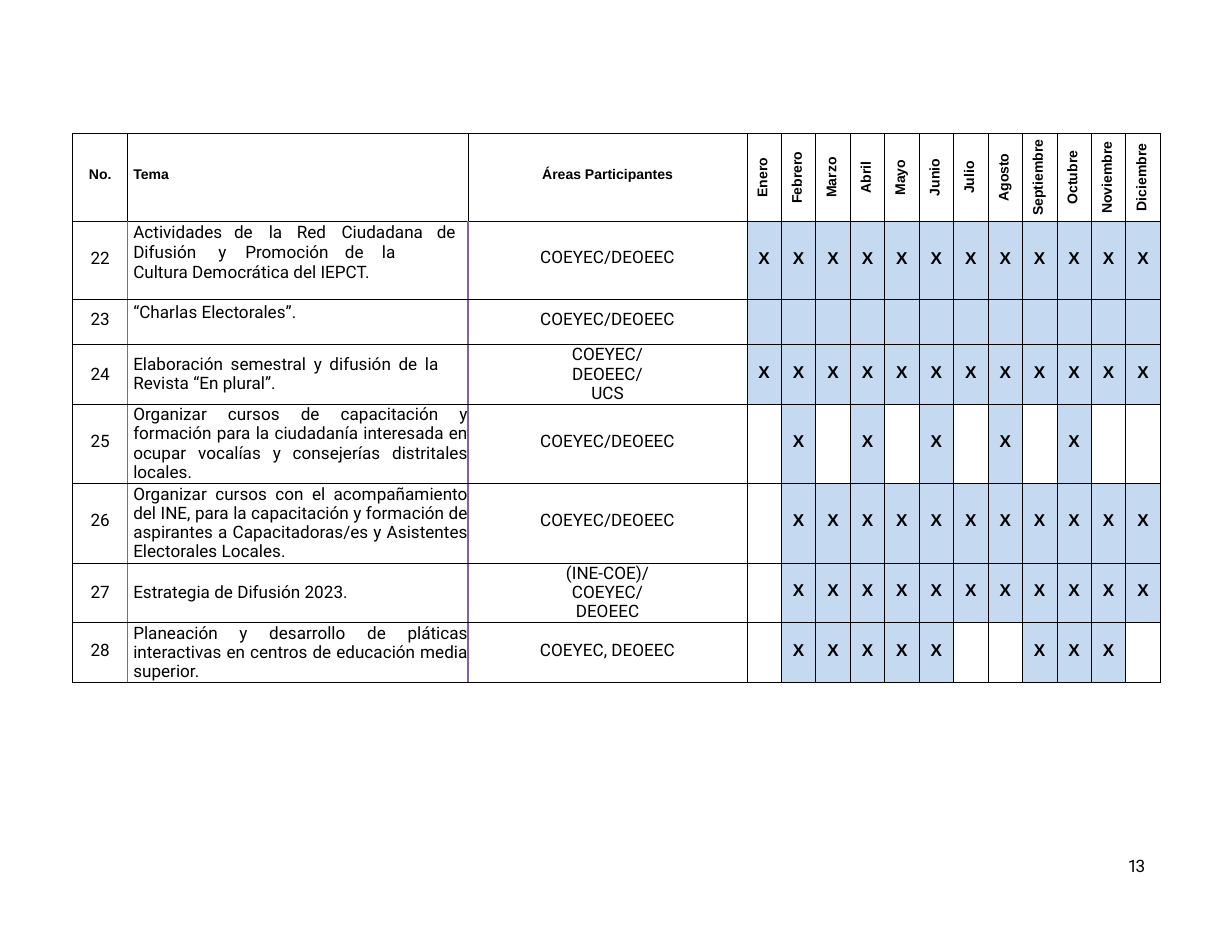
from lxml import etree
from pptx import Presentation, util as u
from pptx.dml.color import RGBColor
from pptx.enum import text
from pptx.oxml import ns

COLORS = {"ink": "000000", "rule": "8063A1", "active": "C5D9F0"}
GRID = (1100, 850)  # columns and rows of the slide grid
CENTER, LEFT, JUSTIFY = text.PP_ALIGN.CENTER, text.PP_ALIGN.LEFT, text.PP_ALIGN.JUSTIFY
TOP, MIDDLE = text.MSO_ANCHOR.TOP, text.MSO_ANCHOR.MIDDLE

MONTHS = ["Enero", "Febrero", "Marzo", "Abril", "Mayo", "Junio", "Julio", "Agosto",
          "Septiembre", "Octubre", "Noviembre", "Diciembre"]
COLUMNS = [49, 304, 249] + [30.75] * len(MONTHS)
HEADER_HEIGHT = 79

# Height, topic, areas, months (X marked, o shaded only, - empty), topic cell options
FIRST_TOPIC = ("Actividades\tde\tla\tRed\tCiudadana\tde\n"
               "Difusión\ty\tPromoción\tde\tla\vCultura Democrática del IEPCT.")
BOTH = "COEYEC/DEOEEC"
ACTIVITIES = [
    (69, FIRST_TOPIC, BOTH, "XXXXXXXXXXXX",
     {"align": LEFT, "anchor": TOP, "spacing": 1.02,
      "tabs": [[0.9, 1.21, 1.46, 1.86, 2.71], [0.76, 1, 1.89, 2.22]]}),
    (40.5, "“Charlas Electorales”.", BOTH, "oooooooooooo",
     {"anchor": TOP, "margin_top": 4}),
    (53.5, "Elaboración semestral y difusión de la Revista “En plural”.",
     "COEYEC/\vDEOEEC/\vUCS", "XXXXXXXXXXXX", {"margin_right": 26}),
    (70.5, "Organizar cursos de capacitación y formación para la ciudadanía "
     "interesada en ocupar vocalías y consejerías distritales locales.",
     BOTH, "-X-X-X-X-X--", {}),
    (71.5, "Organizar cursos con el acompañamiento del INE, para la capacitación y "
     "formación de aspirantes a Capacitadoras/es y Asistentes Electorales Locales.",
     BOTH, "-XXXXXXXXXXX", {}),
    (53, "Estrategia de Difusión 2023.", "(INE-COE)/\vCOEYEC/\vDEOEEC",
     "-XXXXXXXXXXX", {}),
    (53.5, "Planeación y desarrollo de pláticas interactivas en centros de educación "
     "media superior.", "COEYEC, DEOEEC", "-XXXXX--XXX-", {}),
]
FIRST_NUMBER = 22


class Page:
    """Holds the text styles and the current slide."""

    STYLES = {
        "header": {"name": "Arial", "size": u.Pt(9), "bold": True},
        "body": {"name": "Roboto", "size": u.Pt(11), "bold": False},
        "mark": {"name": "Arial", "size": u.Pt(11), "bold": True},
    }

    def __init__(self, presentation):
        self.slide = presentation.slides.add_slide(presentation.slide_layouts[6])
        self.unit_x = presentation.slide_width / GRID[0]
        self.unit_y = presentation.slide_height / GRID[1]

    def x(self, columns):
        return u.Emu(round(columns * self.unit_x))

    def y(self, rows):
        return u.Emu(round(rows * self.unit_y))

    def fill_text(self, frame, content, style, align=CENTER, spacing=None, tabs=()):
        frame.text = content
        for index, paragraph in enumerate(frame.paragraphs):
            if tabs:
                self.tab_stops(paragraph, tabs[index])
            paragraph.alignment = align
            paragraph.space_before = u.Pt(0)
            if spacing:
                paragraph.line_spacing = spacing
            for run in paragraph.runs:
                for name, value in self.STYLES[style].items():
                    setattr(run.font, name, value)
                run.font.color.rgb = RGBColor.from_string(COLORS["ink"])

    def tab_stops(self, paragraph, stops):
        properties = paragraph._p.get_or_add_pPr()
        tab_list = etree.SubElement(properties, ns.qn("a:tabLst"))
        for stop in stops:
            etree.SubElement(tab_list, ns.qn("a:tab"), pos=str(u.Inches(stop)), algn="l")

    def table(self, left, top, columns, rows):
        frame = self.slide.shapes.add_table(
            len(rows), len(columns), self.x(left), self.y(top),
            self.x(sum(columns)), self.y(sum(rows)))
        table = frame.table
        table.first_row = table.horz_banding = False
        for column, width in zip(table.columns, columns):
            column.width = self.x(width)
        for row, height in zip(table.rows, rows):
            row.height = self.y(height)
        return table

    def cell(self, cell, content="", style="body", fill=None, anchor=MIDDLE, vertical=False,
             margin_left=0, margin_right=0, margin_top=0, margin_bottom=0,
             ruled=(), **paragraph_format):
        margins = {"margin_left": self.x(margin_left), "margin_right": self.x(margin_right),
                   "margin_top": self.y(margin_top), "margin_bottom": self.y(margin_bottom)}
        for name, value in margins.items():
            setattr(cell, name, value)
        cell.vertical_anchor = anchor
        if content:
            self.fill_text(cell.text_frame, content, style, **paragraph_format)
        if fill:
            cell.fill.solid()
            cell.fill.fore_color.rgb = RGBColor.from_string(COLORS[fill])
        else:
            cell.fill.background()
        properties = cell._tc.get_or_add_tcPr()
        if vertical:
            properties.set("vert", "vert270")
        self.borders(properties, ruled)

    def borders(self, properties, ruled):
        for index, side in enumerate("LRTB"):
            color, width = ("rule", 1) if side in ruled else ("ink", 0.5)
            line = etree.Element(ns.qn(f"a:ln{side}"), w=str(u.Pt(width)))
            solid = etree.SubElement(line, ns.qn("a:solidFill"))
            etree.SubElement(solid, ns.qn("a:srgbClr"), val=COLORS[color])
            properties.insert(index, line)

    def label(self, content, left, top, width, height):
        box = self.slide.shapes.add_textbox(
            self.x(left), self.y(top), self.x(width), self.y(height))
        frame = box.text_frame
        for side in ("left", "right", "top", "bottom"):
            setattr(frame, f"margin_{side}", 0)
        frame.word_wrap = True
        self.fill_text(frame, content, "body", align=LEFT)
        frame.paragraphs[0].runs[0]._r.get_or_add_rPr().set("spc", "-110")


def build_schedule(page):
    heights = [HEADER_HEIGHT] + [activity[0] for activity in ACTIVITIES]
    table = page.table(65, 119, COLUMNS, heights)

    # Header
    headings = [("No.", {}), ("Tema", {"align": LEFT, "margin_left": 5}),
                ("Áreas Participantes", {})]
    for column, (heading, options) in enumerate(headings):
        page.cell(table.cell(0, column), heading, "header", margin_bottom=5, **options)
    for column, month in enumerate(MONTHS, len(headings)):
        page.cell(table.cell(0, column), month, "header", vertical=True,
                  anchor=TOP, margin_top=7)

    # Activities
    for row, (_, topic, areas, marks, options) in enumerate(ACTIVITIES, 1):
        lift = 0 if "\v" in areas else 4
        page.cell(table.cell(row, 0), str(FIRST_NUMBER + row - 1),
                  margin_bottom=lift, ruled="R")
        topic_format = {"align": JUSTIFY, "spacing": 0.96, "margin_left": 5, **options}
        page.cell(table.cell(row, 1), topic, ruled="LR", **topic_format)
        page.cell(table.cell(row, 2), areas, margin_bottom=lift, spacing=0.96, ruled="L")
        for column, mark in enumerate(marks, len(headings)):
            page.cell(table.cell(row, column), "X" if mark == "X" else "", "mark",
                      fill=None if mark == "-" else "active", margin_bottom=4)


def main():
    presentation = Presentation()
    presentation.slide_width, presentation.slide_height = u.Inches(11), u.Inches(8.5)
    page = Page(presentation)
    build_schedule(page)
    # Page number
    page.label("13", 1007, 764, 22, 20)
    presentation.save("out.pptx")


if __name__ == "__main__":
    main()
